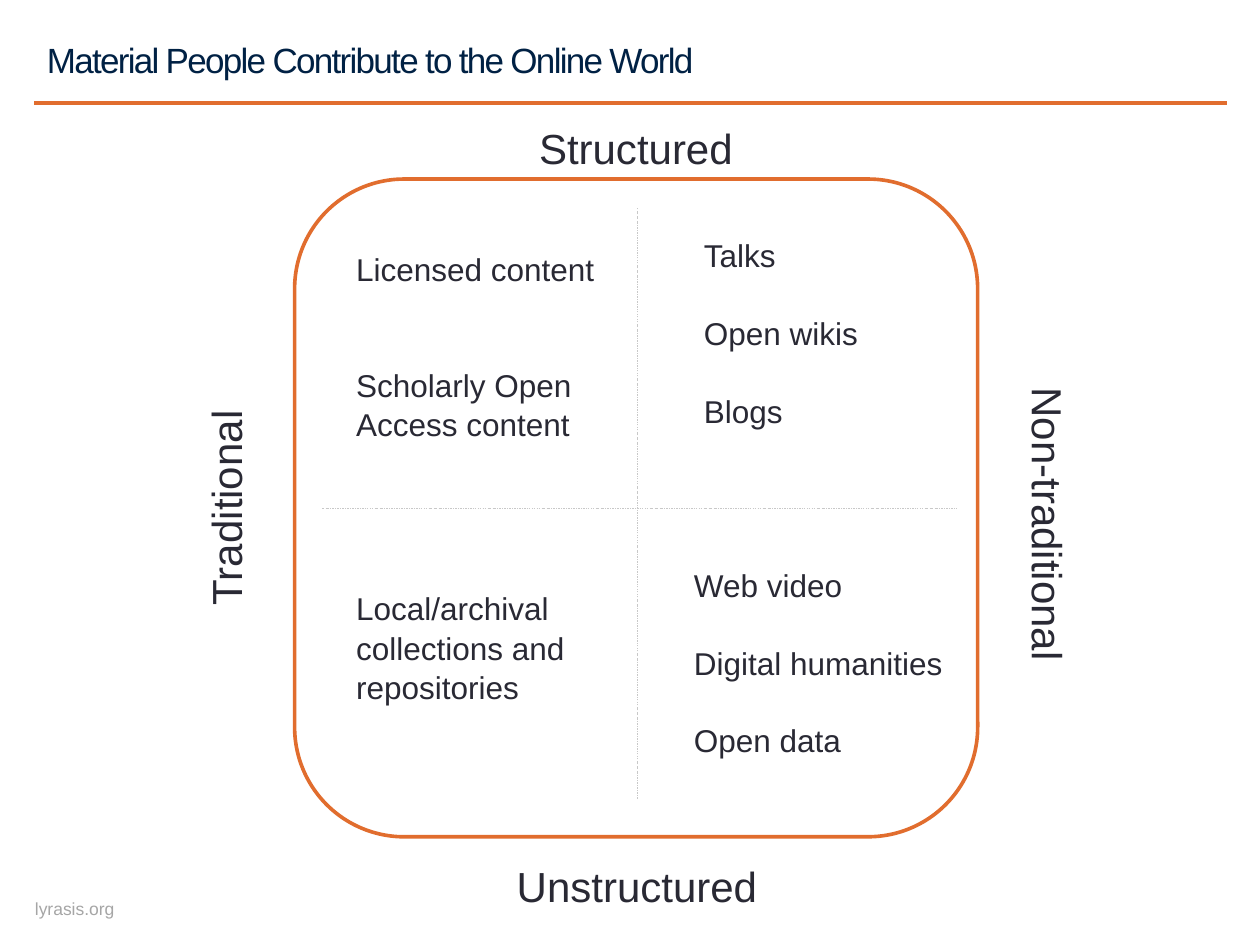
import pptx
import pptx.dml.color
import pptx.enum.dml
import pptx.enum.shapes
import pptx.enum.text
import pptx.oxml
import pptx.oxml.ns
import pptx.util
from pptx.util import Cm

ORANGE, NAVY, INK = "E16D2E", "002144", "292934"
FOOTER_GREY, DIVIDER_GREY = "A6A6A6", "C8C8C8"
ALIGN = pptx.enum.text.PP_ALIGN
ANCHOR = pptx.enum.text.MSO_ANCHOR
LINE_SPACING = 1.05
BLANK_LINE = 21.7  # height in points of one 18 pt line


def colour(value):
    return pptx.dml.color.RGBColor.from_string(value)


def write(frame, lines, size=18, color=INK, align=ALIGN.LEFT, gaps=(),
          tracking=None, wrap=True, anchor=ANCHOR.TOP, spacing=LINE_SPACING):
    """Fill a text frame; gaps holds the blank lines before each later line."""
    frame.word_wrap = wrap
    frame.auto_size = pptx.enum.text.MSO_AUTO_SIZE.NONE
    frame.vertical_anchor = anchor
    for index, line in enumerate(lines):
        para = frame.add_paragraph() if index else frame.paragraphs[0]
        para.alignment = align
        para.line_spacing = spacing
        blanks = gaps[index - 1] if index and gaps else 0
        para.space_before = pptx.util.Pt(blanks * BLANK_LINE)
        span = para.add_run()
        span.text = line
        span.font.name = "Arial"
        span.font.size = pptx.util.Pt(size)
        span.font.color.rgb = colour(color)
        if tracking is not None:
            span._r.get_or_add_rPr().set("spc", str(tracking))


class Page:
    def __init__(self, deck):
        self.slide = deck.slides.add_slide(deck.slide_layouts[5])
        self.shapes = self.slide.shapes

    def title(self, text, left, top, width, height):
        box = self.shapes.title
        box.left, box.top, box.width, box.height = map(Cm, (left, top, width, height))
        write(box.text_frame, [text], size=20, color=NAVY, tracking=-100)

    def text(self, lines, left, top, width, height, rotation=0, inset=None, **style):
        box = self.shapes.add_textbox(*map(Cm, (left, top, width, height)))
        box.rotation = rotation
        frame = box.text_frame
        if inset is not None:
            frame.margin_left = frame.margin_right = Cm(inset)
            frame.margin_top = frame.margin_bottom = Cm(inset)
        write(frame, lines, **style)

    def line(self, x1, y1, x2, y2, color, width, dash=None):
        line = self.shapes.add_connector(
            pptx.enum.shapes.MSO_CONNECTOR.STRAIGHT, *map(Cm, (x1, y1, x2, y2)))
        line.line.color.rgb = colour(color)
        line.line.width = pptx.util.Pt(width)
        if dash:
            line.line.dash_style = dash
        line._element.spPr.append(
            pptx.oxml.parse_xml("<a:effectLst %s/>" % pptx.oxml.ns.nsdecls("a")))

    def rounded_frame(self, left, top, width, height):
        shape = self.shapes.add_shape(
            pptx.enum.shapes.MSO_SHAPE.ROUNDED_RECTANGLE,
            *map(Cm, (left, top, width, height)))
        shape.shadow.inherit = False
        shape.fill.background()
        shape.line.color.rgb = colour(ORANGE)
        shape.line.width = pptx.util.Pt(2.08)


def main():
    deck = pptx.Presentation()
    deck.slide_width, deck.slide_height = Cm(25.4), Cm(19.05)
    page = Page(deck)

    # Title, rule and footer
    page.line(0.69, 2.08, 24.74, 2.08, ORANGE, 2.08)
    page.text(["lyrasis.org"], 0.69, 18.11, 1.63, 0.43, inset=0, size=10,
              color=FOOTER_GREY, align=ALIGN.CENTER, wrap=False,
              anchor=ANCHOR.MIDDLE, spacing=1.0)
    page.title("Material People Contribute to the Online World", 0.69, 0.61, 18.59, 1.27)

    # Quadrant frame and dividers
    page.rounded_frame(5.94, 3.61, 13.77, 13.26)
    dash = pptx.enum.dml.MSO_LINE.DASH_DOT
    page.line(6.5, 10.24, 19.28, 10.24, DIVIDER_GREY, 0.25, dash)
    page.line(12.85, 16.1, 12.85, 4.19, DIVIDER_GREY, 0.25, dash)

    # Axis labels
    for label, left, top, width, rotation in (
            ("Traditional", 0.28, 9.6, 8.43, 270),
            ("Structured", 9.2, 2.29, 7.24, 0),
            ("Unstructured", 9.22, 17.17, 7.24, 0),
            ("Non-traditional", 16.97, 9.93, 8.43, 90)):
        page.text([label], left, top, width, 1.27, rotation, size=24, align=ALIGN.CENTER)

    # Quadrant contents
    page.text(["Licensed content", "Scholarly Open Access content"],
              6.93, 4.88, 5.56, 4.11, gaps=(2,))
    page.text(["Local/archival", "collections and", "repositories"],
              6.93, 11.71, 4.93, 2.57, wrap=False)
    page.text(["Talks", "Open wikis", "Blogs"], 13.94, 4.6, 4.24, 4.11, gaps=(1, 1))
    page.text(["Web video", "Digital humanities", "Open data"],
              13.74, 11.25, 5.97, 4.11, gaps=(1, 1))

    deck.save("out.pptx")


if __name__ == "__main__":
    main()
